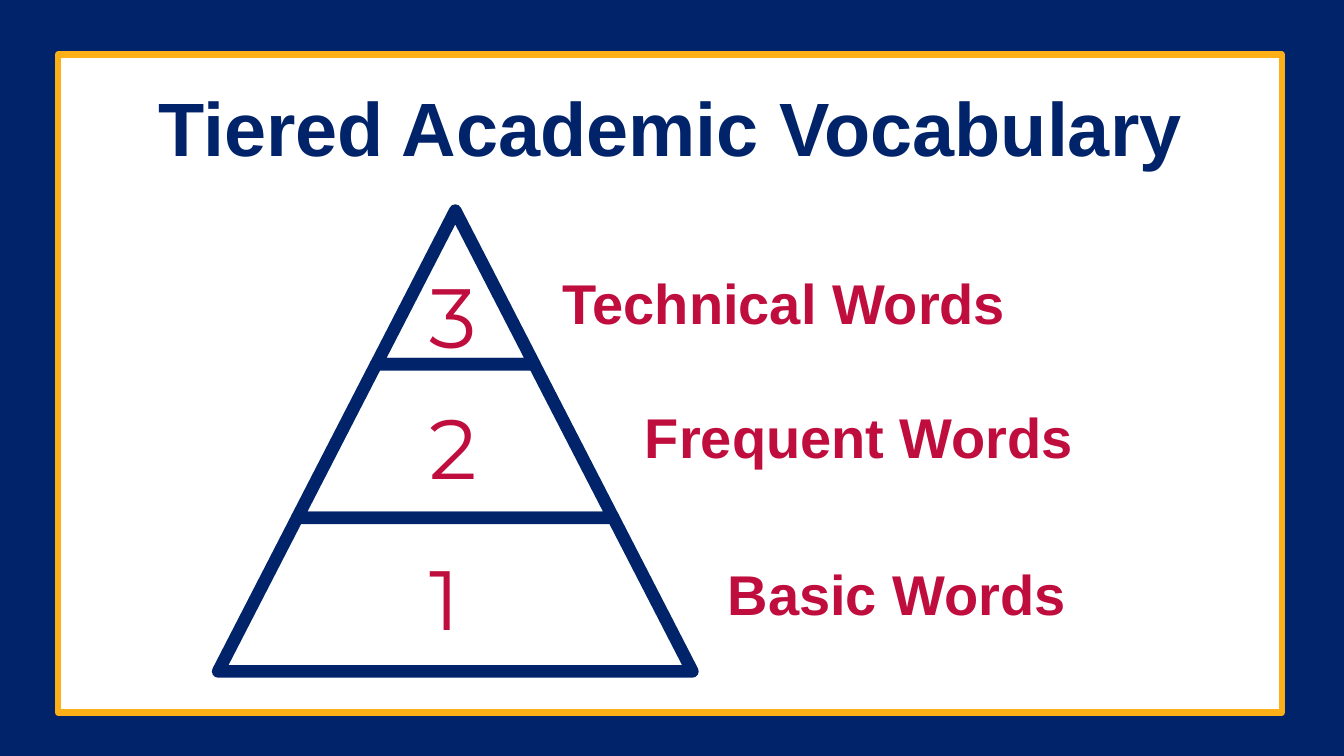
import pptx
import pptx.dml.color
import pptx.enum.shapes
import pptx.enum.text
import pptx.oxml
import pptx.util
from dataclasses import dataclass

Pt = pptx.util.Pt
Color = pptx.dml.color.RGBColor
Shape = pptx.enum.shapes.MSO_SHAPE
Align = pptx.enum.text.PP_ALIGN


@dataclass(frozen=True)
class Theme:
    navy: Color = Color.from_string("012369")
    gold: Color = Color.from_string("FCAF17")
    red: Color = Color.from_string("BF0D3E")
    white: Color = Color.from_string("FFFFFF")
    text_font: str = "Arial"
    number_font: str = "Montserrat"
    title_size: int = 54
    label_size: int = 40
    number_size: int = 60


THEME = Theme()


def add_panel(shapes, kind, left, top, width, height, color, weight):
    panel = shapes.add_shape(kind, Pt(left), Pt(top), Pt(width), Pt(height))
    panel.shadow.inherit = False
    panel.fill.solid()
    panel.fill.fore_color.rgb = THEME.white
    panel.line.color.rgb = color
    panel.line.width = Pt(weight)
    pptx.oxml.ns
    panel.line._get_or_add_ln().append(
        pptx.oxml.parse_xml(f"<a:round {pptx.oxml.ns.nsdecls('a')}/>"))
    return panel


def add_text(page, text, left, top, width, height, size, color, font, bold, align):
    box = page.shapes.add_textbox(Pt(left), Pt(top), Pt(width), Pt(height))
    box.text_frame.word_wrap = True
    box.text_frame.auto_size = pptx.enum.text.MSO_AUTO_SIZE.SHAPE_TO_FIT_TEXT
    para = box.text_frame.paragraphs[0]
    para.text = text
    para.alignment = align
    para.font.name = font
    para.font.size = Pt(size)
    para.font.bold = bold
    para.font.color.rgb = color


def add_pyramid(page, center, top, tier_height, width_step, tiers):
    pyramid = page.shapes.add_group_shape()
    for index in range(tiers):
        width = width_step * (index + 1)
        tier = add_panel(pyramid.shapes, Shape.TRAPEZOID, center - width / 2,
                         top + index * tier_height, width, tier_height, THEME.navy, 9)
        tier.adjustments[0] = width_step / 2 / tier_height


def add_label(page, text, left, top, width):
    add_text(page, text, left, top, width, 55.7, THEME.label_size, THEME.red,
             THEME.text_font, True, Align.CENTER)


def add_number(page, text, top):
    add_text(page, text, 299.5, top, 72.5, 80, THEME.number_size, THEME.red,
             THEME.number_font, False, Align.LEFT)


def main():
    deck = pptx.Presentation()
    deck.slide_width, deck.slide_height = Pt(960), Pt(540)
    page = deck.slides.add_slide(deck.slide_layouts[6])
    page.background.fill.solid()
    page.background.fill.fore_color.rgb = THEME.navy

    add_panel(page.shapes, Shape.RECTANGLE, 41.5, 39, 874, 470, THEME.gold, 4.5)
    add_text(page, "Tiered Academic Vocabulary", 105, 54, 747.5, 72.7,
             THEME.title_size, THEME.navy, THEME.text_font, True, Align.CENTER)
    add_pyramid(page, 325.2, 150.5, 109.7, 112.9, 3)

    add_label(page, "Technical Words", 363.5, 188.5, 393)
    add_label(page, "Frequent Words", 423, 284, 381)
    add_label(page, "Basic Words", 457, 396, 367)
    for text, top in (("3", 185.7), ("2", 278.7), ("1", 386.7)):
        add_number(page, text, top)

    deck.save("out.pptx")


if __name__ == "__main__":
    main()
